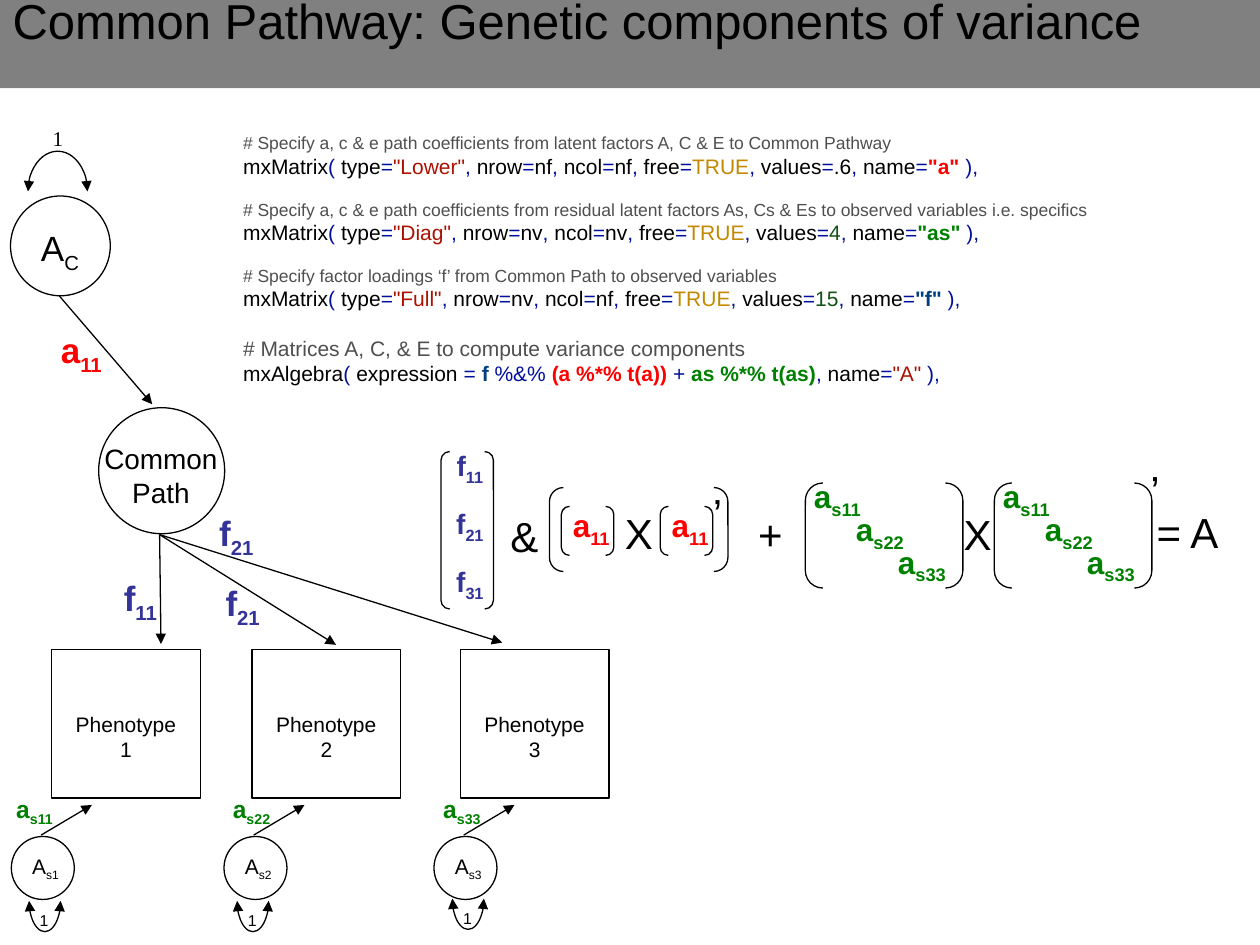
from dataclasses import dataclass
from typing import NamedTuple

from lxml import etree
from pptx import Presentation
from pptx.dml.color import RGBColor
from pptx.enum import shapes, text
from pptx.oxml import ns
from pptx.util import Pt

COLOURS = {
    "black": "000000", "white": "FFFFFF", "band": "808080", "comment": "504F4F",
    "common": "FF0000", "specific": "008000", "loading": "333399",
    "sign": "00109D", "string": "AC1000", "logical": "C28900",
    "number": "125214", "factor": "004080",
}
KINDS = shapes.MSO_SHAPE
LEFT, CENTRE = text.PP_ALIGN.LEFT, text.PP_ALIGN.CENTER


class Span(NamedTuple):
    text: str
    colour: str = "black"
    bold: bool = False
    sub: bool = False


class Area(NamedTuple):
    left: float
    top: float
    width: float
    height: float

    def points(self) -> list:
        return [Pt(length) for length in self]


@dataclass
class Trait:
    number: int
    square_left: float
    circle_left: float
    loop_left: float
    loop_top: float
    path_left: float


def colour(name: str) -> RGBColor:
    return RGBColor.from_string(COLOURS[name])


def symbol(letter: str, index: str, shade: str = "black", bold: bool = True) -> list[Span]:
    return [Span(letter, shade, bold), Span(index, shade, bold, True)]


def write(para, spans: list[Span], size: float, align=LEFT, font: str = "Arial") -> None:
    para.alignment = align
    for span in spans:
        run = para.add_run()
        run.text = span.text
        run.font.name, run.font.size, run.font.bold = font, Pt(size), span.bold
        run.font.color.rgb = colour(span.colour)
        if span.sub:
            run._r.get_or_add_rPr().set("baseline", "-25000")


def add_text(page, area: Area, spans: list[Span], size: float, align=LEFT, font: str = "Arial"):
    box = page.shapes.add_textbox(*area.points())
    box.text_frame.word_wrap = True
    write(box.text_frame.paragraphs[0], spans, size, align, font)
    return box


def add_outline(page, kind, area: Area, filled: bool = True):
    shape = page.shapes.add_shape(kind, *area.points())
    shape.shadow.inherit = False
    if filled:
        shape.fill.solid()
        shape.fill.fore_color.rgb = colour("white")
    else:
        shape.fill.background()
    shape.line.color.rgb = colour("black")
    shape.line.width = Pt(0.75)
    return shape


def add_heads(shape, *ends: str) -> None:
    line = shape.line._get_or_add_ln()
    for end in ends:
        etree.SubElement(line, ns.qn(f"a:{end}"), type="triangle")


def add_arrow(page, start: tuple, end: tuple) -> None:
    corners = [Pt(length) for length in (*start, *end)]
    arrow = page.shapes.add_connector(shapes.MSO_CONNECTOR.STRAIGHT, *corners)
    arrow.line.color.rgb = colour("black")
    arrow.line.width = Pt(0.75)
    add_heads(arrow, "tailEnd")
    etree.SubElement(arrow._element.spPr, ns.qn("a:effectLst"))


def add_loop(page, area: Area, start: int, end: int) -> None:
    """Half an ellipse with two heads; angles in degrees, clockwise from the right."""
    arc = add_outline(page, KINDS.ARC, area, filled=False)
    for place, angle in enumerate((start, end)):
        arc.adjustments[place] = angle * 0.6
    add_heads(arc, "headEnd", "tailEnd")


def add_column(page, area: Area, entries: list[list[Span]], size: float) -> None:
    table = page.shapes.add_table(len(entries), 1, *area.points()).table
    table.first_row = table.horz_banding = False
    for row, spans in enumerate(entries):
        cell = table.cell(row, 0)
        cell.fill.background()
        write(cell.text_frame.paragraphs[0], spans, size, CENTRE)


def matrix_call(kind: str, rows: str, columns: str, value: Span, name: Span) -> list[Span]:
    arguments = {
        "type": Span(f'"{kind}"', "string"), "nrow": Span(rows), "ncol": Span(columns),
        "free": Span("TRUE", "logical"), "values": value, "name": name,
    }
    spans = [Span("mxMatrix"), Span("( ", "sign")]
    for place, (key, entry) in enumerate(arguments.items()):
        if place:
            spans.append(Span(", ", "sign"))
        spans += [Span(key), Span("=", "sign"), entry]
    return spans + [Span(" ),", "sign")]


def add_title(page) -> None:
    title = page.shapes.title
    title.left, title.top, title.width, title.height = Area(0, 0, 720, 50.4).points()
    title.fill.solid()
    title.fill.fore_color.rgb = colour("band")
    frame = title.text_frame
    frame.auto_size = text.MSO_AUTO_SIZE.NONE
    frame.vertical_anchor = text.MSO_ANCHOR.TOP
    frame.paragraphs[0].line_spacing = 0.7
    write(frame.paragraphs[0], [Span("Common Pathway: Genetic components of variance")], 28)


def add_path_diagram(page) -> None:
    # Latent factor and common pathway
    add_loop(page, Area(16, 86.4, 34, 46), 180, 0)
    add_text(page, Area(19.5, 68.4, 27, 21.6), [Span("1")], 12, CENTRE, "Times New Roman")
    add_arrow(page, (33.8, 169), (87, 231))
    add_outline(page, KINDS.OVAL, Area(6, 112, 57, 57))
    add_text(page, Area(13, 126, 42.5, 28), symbol("A", "C", bold=False), 20, CENTRE)
    add_text(page, Area(25.2, 184.3, 42.5, 28), symbol("a", "11", "common"), 20, CENTRE)
    add_outline(page, KINDS.OVAL, Area(56.4, 233, 72, 72))
    add_text(page, Area(48, 249, 88, 46), [Span("Common Path")], 16, CENTRE)

    # Factor loadings
    for end in ((92, 368), (192, 368.5), (287, 367.2)):
        add_arrow(page, (91.2, 305.5), end)
    for left, top, index in ((59, 326, "11"), (117.4, 329, "21"), (113.8, 288.7, "21")):
        add_text(page, Area(left, top, 42.5, 28), symbol("f", index, "loading"), 20, CENTRE)

    # Phenotypes with their specific factors
    traits = [
        Trait(1, 29.5, 6.5, 16.6, 514.8, 2.2),
        Trait(2, 144, 128, 135.5, 514.8, 126),
        Trait(3, 263, 248, 258.5, 513.5, 246.2),
    ]
    for trait in traits:
        add_outline(page, KINDS.RECTANGLE, Area(trait.square_left, 371, 85, 85))
        add_text(page, Area(trait.square_left + 5, 402.8, 75, 23),
                 [Span(f"Phenotype {trait.number}")], 12, CENTRE)
        add_outline(page, KINDS.OVAL, Area(trait.circle_left, 478, 36, 36))
        add_text(page, Area(trait.circle_left + 1.2, 484.3, 36.7, 24.5),
                 symbol("A", f"s{trait.number}", bold=False), 12, CENTRE)
        add_arrow(page, (trait.circle_left + 17, 477.2), (trait.circle_left + 46, 460))
        add_loop(page, Area(trait.loop_left, trait.loop_top - 17.6, 18, 35.2), 0, 180)
        add_text(page, Area(trait.loop_left - 1, trait.loop_top + 2.2, 18, 18), [Span("1")], 9)
        add_text(page, Area(trait.path_left, 450, 42, 24),
                 symbol("a", f"s{trait.number}{trait.number}", "specific"), 14)


def add_code(page) -> None:
    name = "as %*% t(as)"
    algebra = [
        Span("mxAlgebra"), Span("( ", "sign"), Span("expression "), Span("= ", "sign"),
        Span("f", "factor", True), Span(" %&% ", "sign"), Span("(a %*% t(a))", "common", True),
        Span(" + ", "sign"), Span(name, "specific", True), Span(", ", "sign"),
        Span("name"), Span("=", "sign"), Span('"A"', "string"), Span(" ),", "sign"),
    ]
    steps = [
        ("# Specify a, c & e path coefficients from latent factors A, C & E to Common Pathway", 10, 0,
         matrix_call("Lower", "nf", "nf", Span(".6"), Span('"a"', "common", True))),
        ("# Specify a, c & e path coefficients from residual latent factors As, Cs & Es to observed "
         "variables i.e. specifics", 10, 11.5,
         matrix_call("Diag", "nv", "nv", Span("4", "number"), Span('"as"', "specific", True))),
        ("# Specify factor loadings ‘f’ from Common Path to observed variables", 10, 11.5,
         matrix_call("Full", "nv", "nf", Span("15", "number"), Span('"f"', "factor", True))),
        ("# Matrices A, C, & E to compute variance components", 12, 13.8, algebra),
    ]
    box = page.shapes.add_textbox(*Area(131.8, 72, 558, 155).points())
    box.text_frame.word_wrap = True
    para = box.text_frame.paragraphs[0]
    for place, (comment, size, gap, spans) in enumerate(steps):
        if place:
            para = box.text_frame.add_paragraph()
        para.space_before = Pt(gap)
        write(para, [Span(comment, "comment")], size)
        write(box.text_frame.add_paragraph(), spans, 12)


def add_equation(page) -> None:
    # Loading and common factor matrices
    add_column(page, Area(252, 254.2, 33, 100),
               [symbol("f", index, "loading") for index in ("11", "21", "31")], 16)
    brackets = [Area(252, 258, 30, 90), Area(314, 278.6, 102, 48)]
    for left in (316.8, 373.3):
        add_column(page, Area(left, 287.3, 42, 33), [symbol("a", "11", "common")], 18)
        brackets.append(Area(left + 4, 289.4, 30, 28))

    # Specific factor matrices
    for left in (458, 566):
        for step, index in enumerate(("s11", "s22", "s33")):
            add_text(page, Area(left + 24 * step, 269.3 + 18.6 * step, 48, 29),
                     symbol("a", index, "specific"), 18)
        brackets.append(Area(left + 2.2, 276, 90, 60))
    for area in brackets:
        add_outline(page, KINDS.DOUBLE_BRACKET, area, filled=False)

    # Operators
    for sign, left, top, width in (
        ("&", 284.5, 288, 36), ("X", 350, 286.5, 36), ("’", 400.3, 275, 18), ("+", 426.2, 287.3, 36),
        ("X", 543.6, 287.3, 36), ("’", 650.2, 262, 18), ("= A", 653.8, 286, 66),
    ):
        add_text(page, Area(left, top, width, 36), [Span(sign)], 24)


def main() -> None:
    deck = Presentation()
    deck.slide_width, deck.slide_height = Pt(720), Pt(540)
    page = deck.slides.add_slide(deck.slide_layouts[5])
    add_title(page)
    add_path_diagram(page)
    add_code(page)
    add_equation(page)
    deck.save("out.pptx")


if __name__ == "__main__":
    main()
